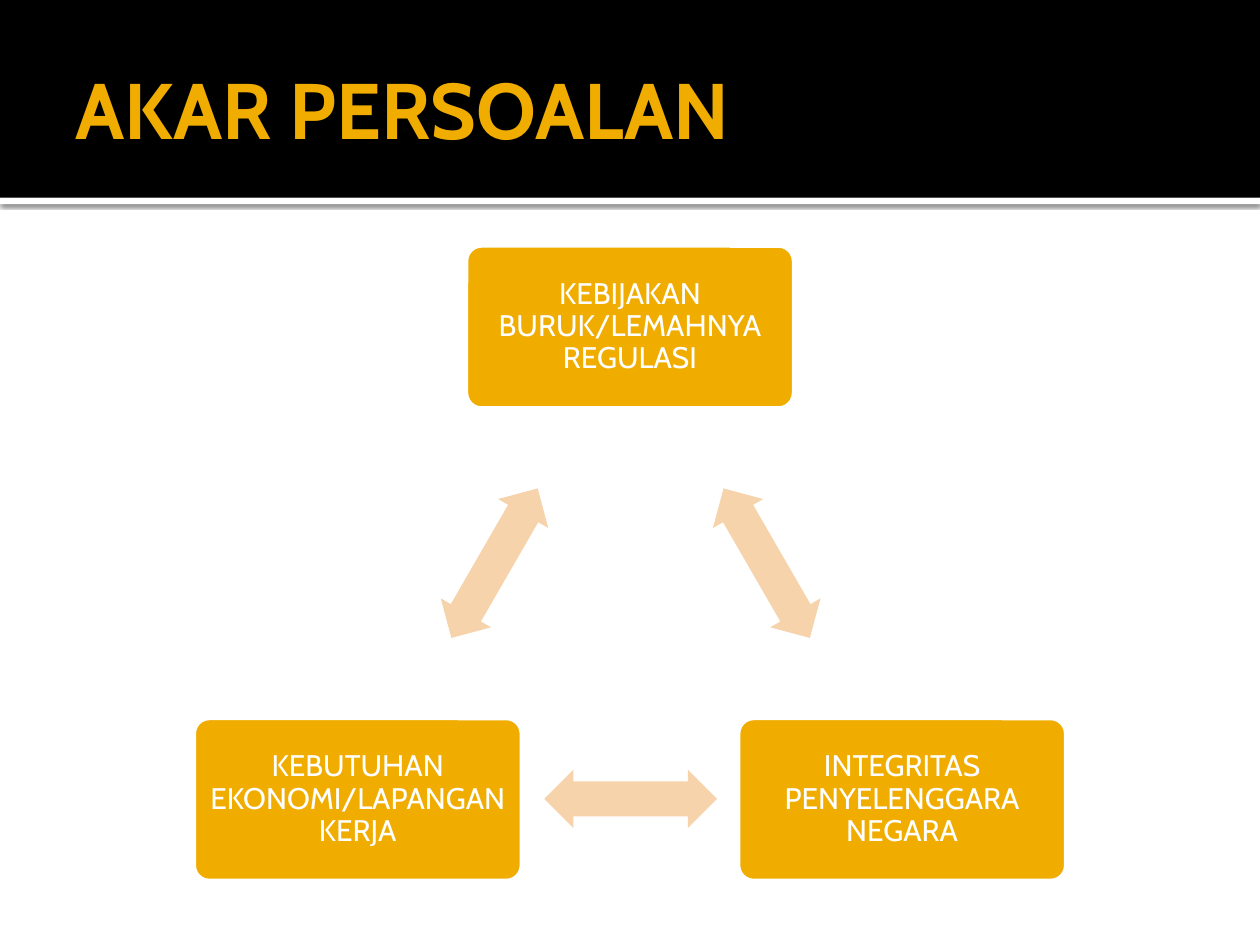
from lxml import etree
from pptx import Presentation
from pptx.dml.color import RGBColor
from pptx.enum.shapes import MSO_SHAPE as SHAPE
from pptx.enum.text import MSO_ANCHOR as ANCHOR, PP_ALIGN as ALIGN
from pptx.oxml import parse_xml
from pptx.oxml.ns import nsdecls
from pptx.util import Inches, Pt

COLORS = {"black": "000000", "white": "FFFFFF", "gold": "F0AD00", "peach": "F6D3AB"}
FONT = "Cabin"

prs = Presentation()
prs.slide_width, prs.slide_height = Inches(10), Inches(7.5)
s = prs.slides.add_slide(prs.slide_layouts[6])


def add_shape(kind, x, y, w, h, color):
    sp = s.shapes.add_shape(kind, Inches(x), Inches(y), Inches(w), Inches(h))
    sp.shadow.inherit = False
    sp.fill.solid()
    sp.fill.fore_color.rgb = RGBColor.from_string(COLORS[color])
    sp.line.fill.background()
    return sp


def set_text(sp, text, size, color, left, other):
    tf = sp.text_frame
    tf.word_wrap = True
    tf.vertical_anchor = ANCHOR.MIDDLE
    tf.margin_left = Inches(left)
    tf.margin_right = tf.margin_top = tf.margin_bottom = Inches(other)
    p = tf.paragraphs[0]
    p.text = text
    p.font.name, p.font.size = FONT, Pt(size)
    p.font.color.rgb = RGBColor.from_string(COLORS[color])
    return p


# Header band with a shadowed white rule beneath it
rule = add_shape(SHAPE.RECTANGLE, 0, 1.57, 10, 0.05, "white")
effects = rule._element.spPr.find("{*}effectLst")
effects.append(parse_xml(
    f'<a:outerShdw {nsdecls("a")} blurRad="{Pt(2.5)}" dist="{Pt(0.8)}" dir="5400000" '
    'algn="tl" rotWithShape="0"><a:srgbClr val="000000"><a:alpha val="60000"/>'
    '</a:srgbClr></a:outerShdw>'))
add_shape(SHAPE.RECTANGLE, 0, 0, 10, 1.57, "black")

# Title
title = s.shapes.add_textbox(Inches(0.5), Inches(0.17), Inches(9), Inches(1.37))
p = set_text(title, "AKAR PERSOALAN", 45, "gold", 0.1, 0.05)
p.font.bold = True

# Cycle: each card is followed by the arrow to the next one
CARD_W, CARD_H = 2.62, 1.31
ARROW_W, ARROW_H = 1.37, 0.46
cycle = [
    ("KEBIJAKAN BURUK/LEMAHNYA REGULASI", 3.69, 1.94, 5.4, 4.24, 60),
    ("INTEGRITAS PENYELENGGARA NEGARA", 5.85, 5.69, 4.32, 6.11, 180),
    ("KEBUTUHAN EKONOMI/LAPANGAN KERJA", 1.53, 5.69, 3.24, 4.24, 300),
]
for text, x, y, arrow_x, arrow_y, angle in cycle:
    card = add_shape(SHAPE.ROUNDED_RECTANGLE, x, y, CARD_W, CARD_H, "gold")
    card.adjustments[0] = 0.1
    card.line.color.rgb = RGBColor.from_string(COLORS["white"])
    card.line.width = Pt(3.78)
    p = set_text(card, text, 17, "white", 0.07, 0.07)
    p.alignment = ALIGN.CENTER
    p.line_spacing = 0.9

    arrow = add_shape(SHAPE.LEFT_RIGHT_ARROW, arrow_x, arrow_y, ARROW_W, ARROW_H, "peach")
    arrow.adjustments[0], arrow.adjustments[1] = 0.6, 0.5
    arrow.rotation = angle

prs.save("out.pptx")
